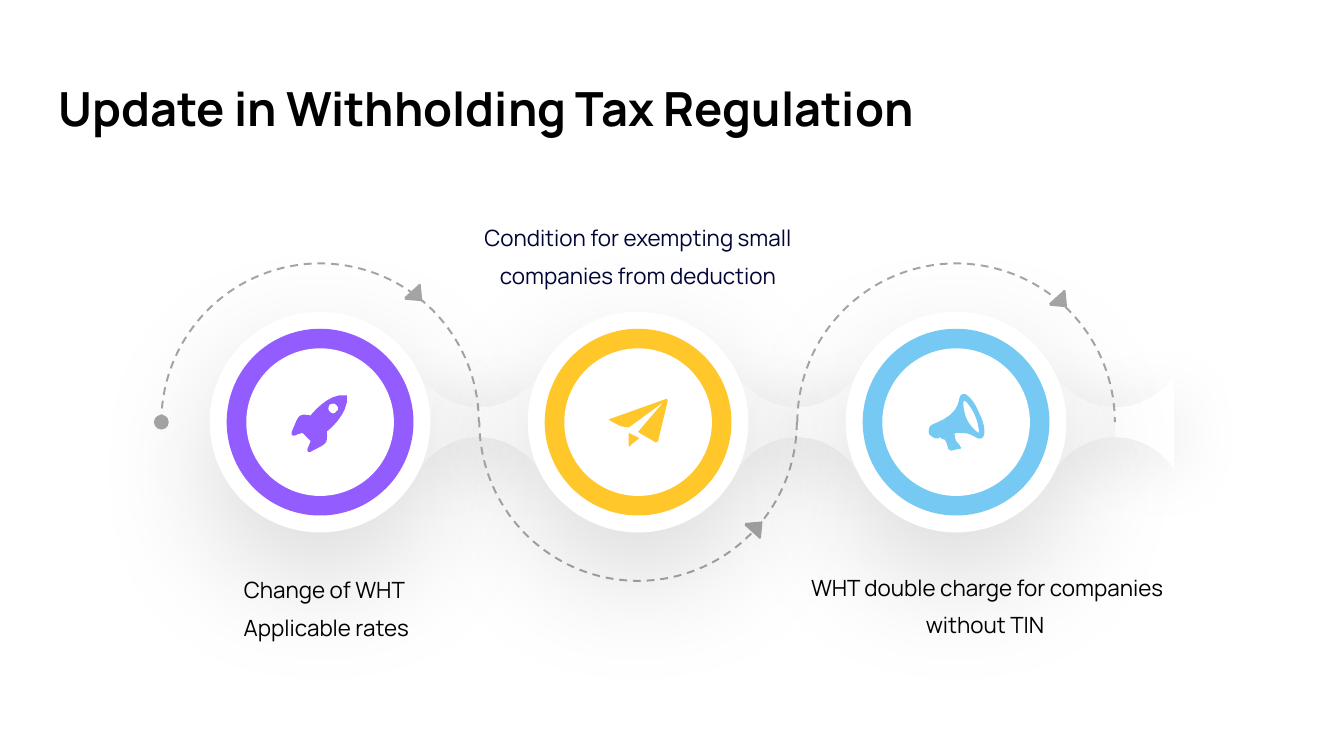
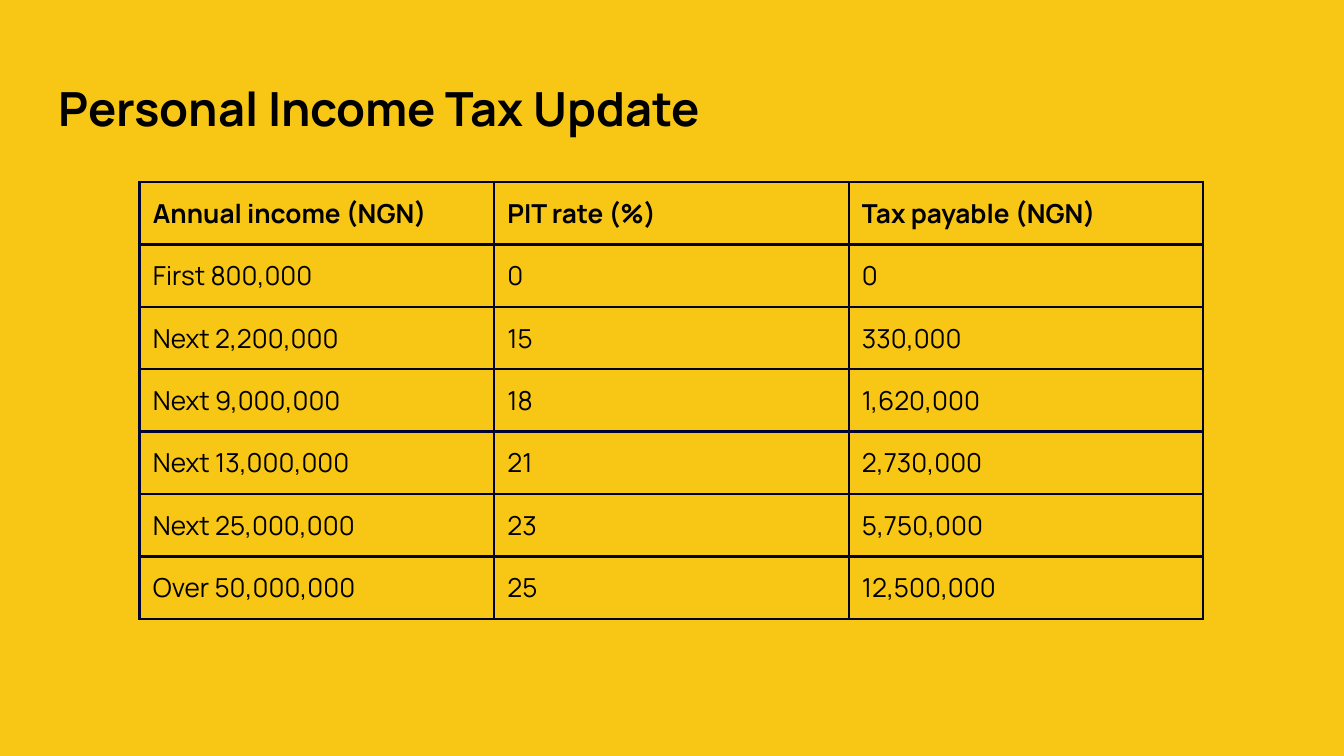
from dataclasses import dataclass

from lxml import etree
from pptx import Presentation
from pptx.dml.color import RGBColor
from pptx.enum.dml import MSO_LINE_DASH_STYLE as Dash
from pptx.enum.shapes import MSO_SHAPE as Shape
from pptx.enum.text import MSO_ANCHOR as Anchor, MSO_AUTO_SIZE as AutoSize, PP_ALIGN as Align
from pptx.oxml.ns import qn
from pptx.util import Cm, Pt


@dataclass(frozen=True)
class Theme:
    font: str = "Manrope"
    title_size: float = 25.2
    table_size: float = 14
    caption_size: float = 12
    black: str = "000000"
    white: str = "FFFFFF"
    navy: str = "000435"
    grey: str = "A5A5A5"
    purple: str = "935CFF"
    amber: str = "FFC729"
    sky: str = "76C9F2"
    yellow: str = "F8C614"


@dataclass(frozen=True)
class Shadow:
    opacity: int
    blur: float
    distance: float


@dataclass(frozen=True)
class Step:
    color: str
    icon: list
    arrow: tuple
    upper: bool
    caption: list
    caption_color: str
    caption_box: tuple


THEME = Theme()
NECK_SHADOW = Shadow(11, 37.7, 6.3)
DISC_SHADOW = Shadow(15, 69.1, 24.1)

GRID = Cm(2.54) / 100
CURVE_POINTS = 8
FIRST_CENTRE, CENTRE_Y, PITCH = 6.05, 7.98, 6.01
ARC_RADIUS = 3.0

# outlines: start point, then segments of 2 numbers (line) or 6 (cubic curve)
ARROW = [[(6, 5), (5, -6), (5, -7, 3, -7, 3, -6), (-7, 3), (-7, 4, -7, 5, -6, 5),
          (5, 6), (6, 7, 6, 6, 6, 5)]]
NECK = [[(-44, -34.5), (-44, 34.5), (-44, 34.5, -29, 11, 0, 11), (0, -11),
         (-29, -11, -44, -34.5, -44, -34.5)]]
ROCKET = [
    [(5, 7), (5, 7, 22, -6, 20, -20), (19, -20), (6, -22, -7, -5, -7, -5),
     (-17, -7, -16, -4, -21, 7), (-22, 10, -20, 10, -19, 10), (-17, 9, -13, 8, -13, 8),
     (-7, 14), (-7, 14, -8, 17, -9, 19), (-10, 21, -9, 23, -7, 22), (4, 16, 6, 17, 5, 7)],
    [(7, -8), (6, -9, 6, -11, 7, -13), (9, -14, 11, -14, 12, -13),
     (14, -11, 14, -9, 12, -8), (11, -6, 9, -6, 7, -8)],
]
PLANE = [
    [(20, -17), (-22, -2), (-21, -1, -13, 3, -13, 3), (-7, 4), (19, -15), (1, 6),
     (0, 7, 0, 7, 1, 8), (13, 15), (13, 15, 14, 15, 15, 14), (15, 13, 22, -15, 22, -16),
     (22, -17, 21, -18, 20, -17)],
    [(-7, 17), (-7, 18, -7, 18, -6, 18), (-6, 17, 1, 12, 1, 12), (-7, 8)],
]
MEGAPHONE = [
    [(17, -7), (14, -15, 8, -22, 5, -21), (-1, -19, 8, -8, -18, 2), (-20, 3, -21, 6, -20, 9),
     (-19, 10, -16, 13, -13, 12), (-12, 11), (-10, 14, -8, 12, -8, 14),
     (-7, 15, -6, 19, -6, 20), (-5, 20, -4, 22, -3, 21), (-2, 21, 1, 20, 2, 20),
     (4, 20, 4, 19, 3, 18), (3, 17, 1, 16, 1, 15), (0, 15, -1, 11, -1, 10),
     (-2, 9, -1, 8, 1, 8), (13, 7, 15, 14, 19, 12), (22, 11, 22, 2, 17, -7)],
    [(17, 8), (16, 8, 11, 4, 8, -2), (5, -9, 5, -16, 6, -16), (7, -16, 11, -12, 14, -5),
     (17, 2, 17, 7, 17, 8)],
]

STEPS = [
    Step(THEME.purple, ROCKET, (70, -96), True, ["Change of WHT ", "Applicable rates"],
         THEME.black, (2.74, 10.57, 6.86)),
    Step(THEME.amber, PLANE, (86.5, 80), False,
         ["Condition for exempting small companies from deduction"],
         THEME.navy, (8.48, 3.91, 7.16)),
    Step(THEME.sky, MEGAPHONE, (76.5, -91.5), True,
         ["WHT double charge for companies without TIN "], THEME.black, (14.81, 10.52, 7.7)),
]

TAX_BANDS = [
    ("Annual income (NGN)", "PIT rate (%)", "Tax payable (NGN)"),
    ("First 800,000", "0", "0"),
    ("Next 2,200,000", "15", "330,000"),
    ("Next 9,000,000", "18", "1,620,000"),
    ("Next 13,000,000", "21", "2,730,000"),
    ("Next 25,000,000", "23", "5,750,000"),
    ("Over 50,000,000", "25", "12,500,000"),
]


def rgb(color):
    return RGBColor.from_string(color)


def style_font(paragraph, size, color, bold=False):
    font = paragraph.font
    font.name, font.size, font.bold = THEME.font, Pt(size), bold
    font.color.rgb = rgb(color)


def add_slide(presentation, title, background):
    slide = presentation.slides.add_slide(presentation.slide_layouts[6])
    slide.background.fill.solid()
    slide.background.fill.fore_color.rgb = rgb(background)
    frame = slide.shapes.add_textbox(Cm(0.86), Cm(1.24), Cm(23.67), Cm(1.6)).text_frame
    frame.word_wrap = True
    frame.vertical_anchor = Anchor.MIDDLE
    frame.margin_top = frame.margin_bottom = Cm(0.25)
    paragraph = frame.paragraphs[0]
    paragraph.text = title
    style_font(paragraph, THEME.title_size, THEME.black, bold=True)
    return slide


def paint(shape, color, shadow=None):
    shape.fill.solid()
    shape.fill.fore_color.rgb = rgb(color)
    shape.line.fill.background()
    shape.shadow.inherit = False
    if shadow:
        effects = shape._element.spPr.find(qn("a:effectLst"))
        outer = etree.SubElement(effects, qn("a:outerShdw"), blurRad=str(Pt(shadow.blur)),
                                 dist=str(Pt(shadow.distance)), dir="5400000",
                                 algn="t", rotWithShape="0")
        tint = etree.SubElement(outer, qn("a:srgbClr"), val=THEME.black)
        etree.SubElement(tint, qn("a:alpha"), val=str(shadow.opacity * 1000))


def flatten(contour):
    points = [contour[0]]
    for segment in contour[1:]:
        if len(segment) == 2:
            points.append(segment)
            continue
        x0, y0 = points[-1]
        x1, y1, x2, y2, x3, y3 = segment
        for index in range(1, CURVE_POINTS + 1):
            t = index / CURVE_POINTS
            a, b, c, d = (1 - t) ** 3, 3 * t * (1 - t) ** 2, 3 * t * t * (1 - t), t ** 3
            points.append((a * x0 + b * x1 + c * x2 + d * x3,
                           a * y0 + b * y1 + c * y2 + d * y3))
    return points


def add_outline(slide, contours, x, y, color, mirror=(1, 1), shadow=None):
    builder = None
    for contour in contours:
        points = [(int(x + px * mirror[0] * GRID), int(y + py * mirror[1] * GRID))
                  for px, py in flatten(contour)]
        if builder is None:
            builder = slide.shapes.build_freeform(*points[0], scale=1.0)
        else:
            builder.move_to(*points[0])
        builder.add_line_segments(points[1:], close=True)
    paint(builder.convert_to_shape(), color, shadow)


def add_disc(slide, x, y, diameter, color, shadow=None):
    radius = diameter / 2
    disc = slide.shapes.add_shape(Shape.OVAL, Cm(x - radius), Cm(y - radius),
                                  Cm(diameter), Cm(diameter))
    paint(disc, color, shadow)


def add_dashed_arc(slide, x, y, upper):
    arc = slide.shapes.add_shape(Shape.ARC, Cm(x - ARC_RADIUS), Cm(y - ARC_RADIUS),
                                 Cm(2 * ARC_RADIUS), Cm(2 * ARC_RADIUS))
    arc.adjustments[0], arc.adjustments[1] = (108, 0) if upper else (0, 108)
    arc.fill.background()
    arc.line.color.rgb = rgb(THEME.grey)
    arc.line.width = Pt(1.05)
    arc.line.dash_style = Dash.DASH
    arc.shadow.inherit = False


def add_caption(slide, lines, color, box):
    left, top, width = box
    frame = slide.shapes.add_textbox(Cm(left), Cm(top), Cm(width), Cm(1.5)).text_frame
    frame.word_wrap = True
    frame.auto_size = AutoSize.SHAPE_TO_FIT_TEXT
    for index, line in enumerate(lines):
        paragraph = frame.add_paragraph() if index else frame.paragraphs[0]
        paragraph.text = line
        paragraph.alignment = Align.CENTER
        paragraph.line_spacing = 1.4
        style_font(paragraph, THEME.caption_size, color)


def add_step(slide, step, x, starts):
    y = CENTRE_Y
    dx, dy = step.arrow
    add_outline(slide, ARROW, Cm(x) + dx * GRID, Cm(y) + dy * GRID, THEME.grey,
                mirror=(1, 1 if step.upper else -1))
    for side in (1, -1):
        add_outline(slide, NECK, Cm(x + ARC_RADIUS), Cm(y), THEME.white,
                    mirror=(side, 1), shadow=NECK_SHADOW)
    add_dashed_arc(slide, x, y, step.upper)
    if starts:
        add_disc(slide, x - ARC_RADIUS, y, 0.28, THEME.grey)
    add_disc(slide, x, y, 4.17, THEME.white, DISC_SHADOW)
    add_disc(slide, x, y, 3.53, step.color)
    add_disc(slide, x, y, 2.79, THEME.white)
    add_outline(slide, step.icon, Cm(x), Cm(y), step.color)
    add_caption(slide, step.caption, step.caption_color, step.caption_box)


def add_borders(cell):
    properties = cell._tc.get_or_add_tcPr()
    for index, side in enumerate(("lnL", "lnR", "lnT", "lnB")):
        line = etree.Element(qn(f"a:{side}"), w=str(Pt(1.5)))
        fill = etree.SubElement(line, qn("a:solidFill"))
        etree.SubElement(fill, qn("a:srgbClr"), val=THEME.navy)
        properties.insert(index, line)


def add_tax_table(slide, rows):
    column_width, row_height = Cm(6.7), Cm(1.18)
    table = slide.shapes.add_table(len(rows), len(rows[0]), Cm(2.64), Cm(3.44),
                                   column_width * len(rows[0]), row_height * len(rows)).table
    table.first_row = table.horz_banding = False
    for row_index, values in enumerate(rows):
        for column_index, value in enumerate(values):
            cell = table.cell(row_index, column_index)
            cell.margin_left = cell.margin_right = Cm(0.25)
            cell.margin_top = cell.margin_bottom = Cm(0.25)
            cell.fill.background()
            add_borders(cell)
            paragraph = cell.text_frame.paragraphs[0]
            paragraph.text = value
            style_font(paragraph, THEME.table_size, THEME.black, bold=row_index == 0)


def main():
    presentation = Presentation()
    presentation.slide_width, presentation.slide_height = Cm(25.4), Cm(14.29)

    withholding = add_slide(presentation, "Update in Withholding Tax Regulation", THEME.white)
    for index, step in enumerate(STEPS):
        add_step(withholding, step, FIRST_CENTRE + index * PITCH, starts=index == 0)

    income = add_slide(presentation, "Personal Income Tax Update", THEME.yellow)
    add_tax_table(income, TAX_BANDS)

    presentation.save("out.pptx")


if __name__ == "__main__":
    main()
